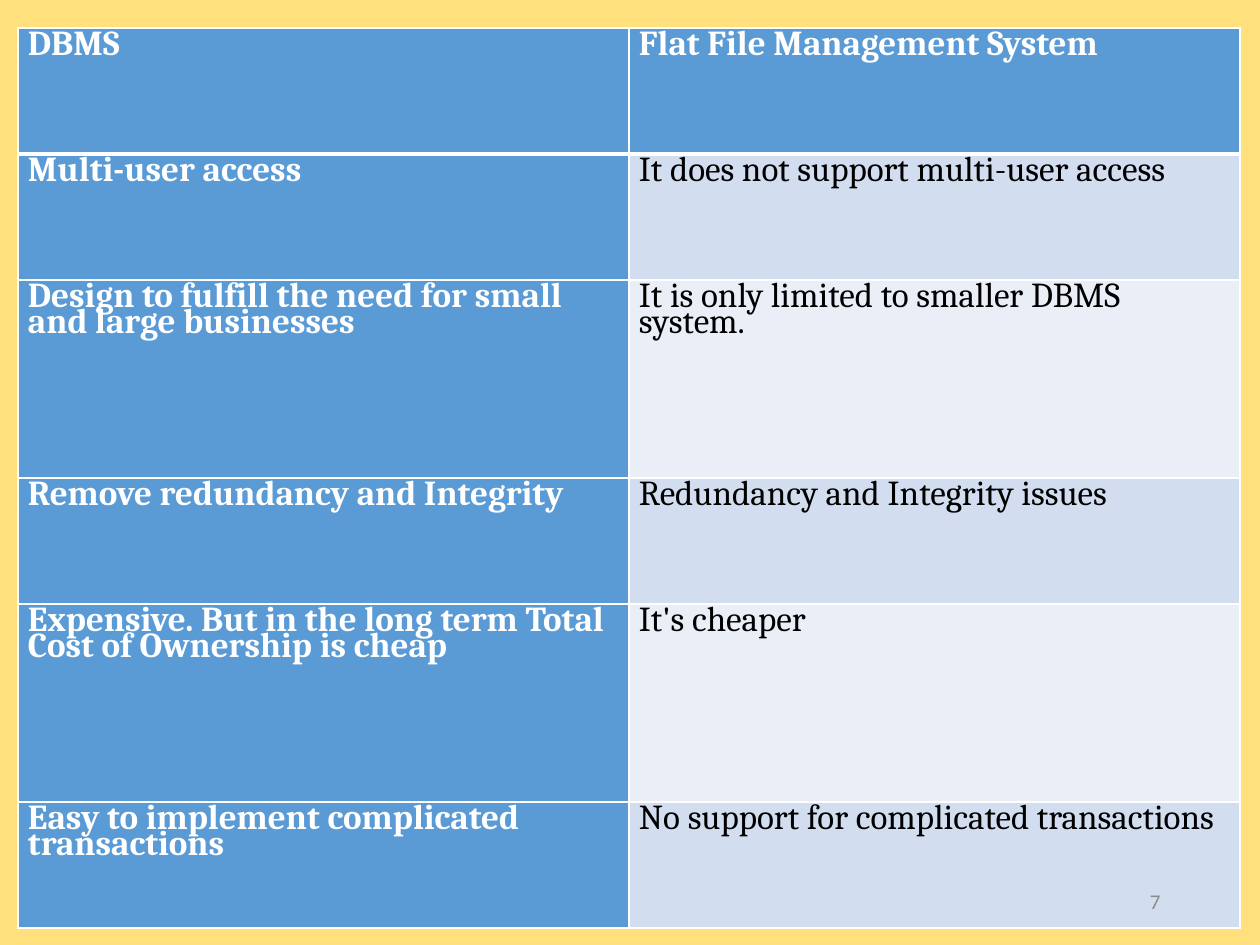
"""Build a slide with a table comparing a DBMS with a flat file system."""
from lxml import etree
from pptx import Presentation, util as u
from pptx.dml.color import RGBColor
from pptx.enum import text
from pptx.oxml import ns

PX = 914400 / 126


def px(n):
    return u.Emu(round(n * PX))


def paint(fill, color):
    fill.solid()
    fill.fore_color.rgb = RGBColor.from_string(color)


ROWS = [
    ("DBMS", "Flat File Management System"),
    ("Multi-user access", "It does not support multi-user access"),
    ("Design to fulfill the need for small and large businesses",
     "It is only limited to smaller DBMS system."),
    ("Remove redundancy and Integrity", "Redundancy and Integrity issues"),
    ("Expensive. But in the long term Total Cost of Ownership is cheap", "It's cheaper"),
    ("Easy to implement complicated transactions", "No support for complicated transactions"),
]
HEIGHTS = [126, 126, 198, 126, 198, 126]
BLUE, BANDS = "5B9BD5", ("EAEFF7", "D2DEEF")
PARAGRAPH = {"line_spacing": u.Pt(15), "space_after": u.Pt(15)}
MARGINS = dict.fromkeys(("margin_left", "margin_right", "margin_top", "margin_bottom"), px(10))

prs = Presentation()
prs.slide_width, prs.slide_height = px(1260), px(945)
s = prs.slides.add_slide(prs.slide_layouts[6])
paint(s.background.fill, "FFE07D")

table = s.shapes.add_table(len(ROWS), 2, px(18), px(28), px(1222), px(sum(HEIGHTS))).table
for col in table.columns:
    col.width = px(611)

for i, (row, height) in enumerate(zip(ROWS, HEIGHTS)):
    table.rows[i].height = px(height)
    for j, words in enumerate(row):
        cell = table.cell(i, j)
        for name, value in MARGINS.items():
            setattr(cell, name, value)
        heading = i == 0 or j == 0
        tcPr = cell._tc.get_or_add_tcPr()
        for side in "LRTB":
            thick = (i, side) in ((0, "B"), (1, "T"))
            ln = etree.SubElement(tcPr, ns.qn(f"a:ln{side}"), w=str(u.Pt(3 if thick else 1)))
            fill = etree.SubElement(ln, ns.qn("a:solidFill"))
            etree.SubElement(fill, ns.qn("a:srgbClr"), val="FFFFFF")
        paint(cell.fill, BLUE if heading else BANDS[i % 2])
        p = cell.text_frame.paragraphs[0]
        for name, value in PARAGRAPH.items():
            setattr(p, name, value)
        r = p.add_run()
        r.text = words
        for name, value in {"name": "Cambria", "size": u.Pt(20), "bold": heading}.items():
            setattr(r.font, name, value)
        paint(r.font.fill, "FFFFFF" if heading else "000000")

tf = s.shapes.add_textbox(px(890), px(876), px(283), px(50)).text_frame
tf.word_wrap = True
tf.vertical_anchor = text.MSO_ANCHOR.MIDDLE
p = tf.paragraphs[0]
p.alignment = text.PP_ALIGN.RIGHT
r = p.add_run()
r.text = "7"
for name, value in {"name": "Calibri", "size": u.Pt(12)}.items():
    setattr(r.font, name, value)
paint(r.font.fill, "8C8C8C")

prs.save("out.pptx")
